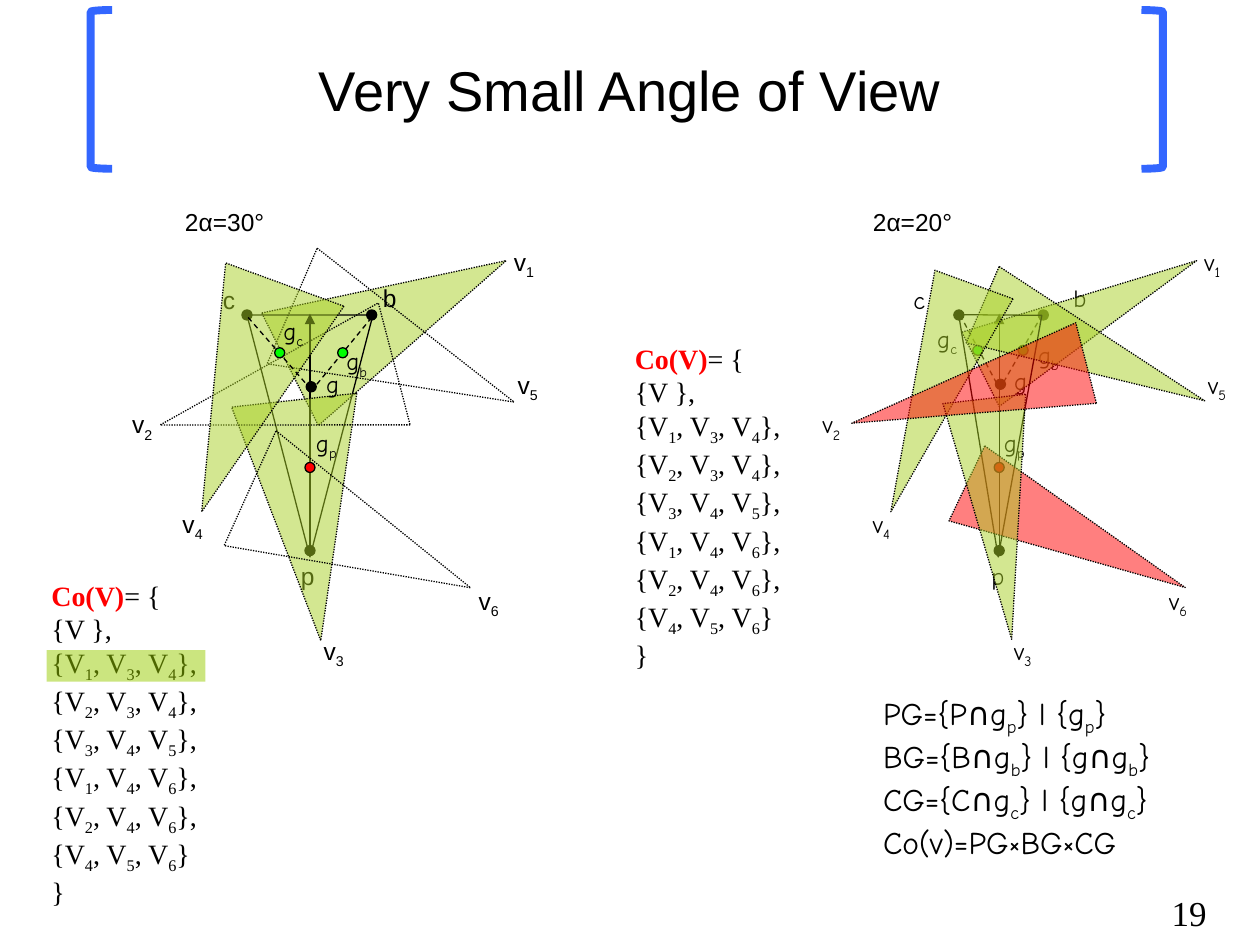
from pptx import Presentation
from pptx.dml.color import RGBColor
from pptx.enum import dml, shapes, text
from pptx.oxml import parse_xml
from pptx.oxml.ns import nsdecls, qn
from pptx.util import Inches, Pt
from lxml import etree

BLACK = RGBColor(0x00, 0x00, 0x00)
WHITE = RGBColor(0xFF, 0xFF, 0xFF)
BLUE = RGBColor(0x33, 0x66, 0xFF)
RED = RGBColor(0xFF, 0x00, 0x00)
GREEN = RGBColor(0x00, 0xFF, 0x00)
LIME = RGBColor(0xA8, 0xD0, 0x25)
MARKER = RGBColor(0x99, 0xCC, 0x00)
ARIAL, COMIC, TIMES = "Arial", "Comic Neue", "Times New Roman"
DOT = 0.08
VIEW_LENGTH = 1.92
RIGHT_SHIFT = 5.48
AUTO = shapes.MSO_SHAPE
DOTTED = dml.MSO_LINE.ROUND_DOT

prs = Presentation()
prs.slide_width, prs.slide_height = Inches(10), Inches(7.5)
s = prs.slides.add_slide(prs.slide_layouts[5])


def add_shape(kind, x, y, w, h, fill=None, line=BLACK, width=0.75,
              rotation=0, dash=None, alpha=None):
    sp = s.shapes.add_shape(kind, Inches(x), Inches(y), Inches(w), Inches(h))
    sp.shadow.inherit = False
    sp.rotation = rotation
    if fill is None:
        sp.fill.background()
    else:
        sp.fill.solid()
        sp.fill.fore_color.rgb = fill
    if alpha:
        color = sp.fill._xPr.find(qn("a:solidFill"))[0]
        etree.SubElement(color, qn("a:alpha")).set("val", str(alpha * 1000))
    if line is None:
        sp.line.fill.background()
    else:
        sp.line.color.rgb = line
        sp.line.width = Pt(width)
        if dash:
            sp.line.dash_style = dash


def add_text(x, y, w, h, lines, font, size=14, wrap=False):
    """Write lines of text; the character after each underscore is a subscript."""
    tf = s.shapes.add_textbox(Inches(x), Inches(y), Inches(w), Inches(h)).text_frame
    tf.word_wrap = wrap
    for i, line in enumerate(lines):
        p = tf.add_paragraph() if i else tf.paragraphs[0]
        first, *rest = line.split("_")
        pieces = [(first, False)]
        for part in rest:
            pieces += [(part[0], True), (part[1:], False)]
        for piece, subscript in pieces:
            if not piece:
                continue
            r = p.add_run()
            r.text = piece
            r.font.name, r.font.size, r.font.color.rgb = font, Pt(size), BLACK
            if subscript:
                r._r.get_or_add_rPr().set("baseline", "-25000")
    return tf


# Title and its brackets
add_shape(AUTO.LEFT_BRACKET, 0.72, 0.08, 0.17, 1.26, WHITE, BLUE, 4.5)
add_shape(AUTO.RIGHT_BRACKET, 9.06, 0.08, 0.17, 1.26, WHITE, BLUE, 4.5)
title = s.shapes.title
title.left, title.top = Inches(0.75), Inches(0.08)
title.width, title.height = Inches(8.5), Inches(1.25)
tf = title.text_frame
tf.text = "Very Small Angle of View"
tf.vertical_anchor = text.MSO_ANCHOR.MIDDLE
p = tf.paragraphs[0]
p.alignment = text.PP_ALIGN.CENTER
font = p.runs[0].font
font.name, font.size, font.color.rgb = ARIAL, Pt(32), BLACK

# Label positions shared by both diagrams
corner_labels = [("label", 2.29, 4.4, "p"), ("label", 2.94, 2.2, "b"),
                 ("label", 1.67, 2.21, "c")]
view_labels = [("label", 3.98, 1.91, "v_1"), ("label", 0.95, 3.2, "v_2"),
               ("label", 2.47, 5, "v_3"), ("label", 1.35, 3.99, "v_4"),
               ("label", 4.01, 2.89, "v_5"), ("label", 3.7, 4.6, "v_6")]

# Diagram parts from back to front:
# view: x, y, rotation, fill; dot: x, y, fill; line: from, to, style
left_parts = [
    ("view", 2.66, 1.54, 63.3, LIME),
    ("base", 1.96, 2.5, 180),
    ("dot", 2.42, 4.33, BLACK), ("dot", 2.91, 2.46, BLACK), ("dot", 1.92, 2.46, BLACK),
    *corner_labels,
    ("line", 2.46, 2.49, 2.46, 4.38, "arrow"),
    ("view", 1.94, 3.17, 173.7, LIME), ("view", 1.7, 2.17, 255.4, None),
    ("view", 2.36, 3.31, 114.3, None), ("view", 2.7, 1.85, 113.4, None),
    ("view", 1.43, 2.2, 200.1, LIME),
    *view_labels,
    ("dot", 2.43, 3.03, BLACK), ("glabel", 2.49, 2.88, "g"),
    ("line", 1.97, 2.52, 2.45, 3.07, "dash"), ("line", 2.95, 2.52, 2.49, 3.08, "dash"),
    ("dot", 2.18, 2.76, GREEN), ("dot", 2.68, 2.76, GREEN),
    ("glabel", 2.15, 2.46, "g_c"), ("glabel", 2.65, 2.7, "g_b"),
    ("dot", 2.42, 3.67, RED), ("glabel", 2.41, 3.35, "g_p"),
]
right_parts = [
    ("dot", 7.9, 3.01, BLACK), ("glabel", 7.95, 2.86, "g"),
    ("line", 7.93, 2.49, 7.93, 4.38, "arrow"),
    *[("glabel", x + RIGHT_SHIFT, y, name)
      for _, x, y, name in view_labels + corner_labels],
    ("dot", 7.89, 3.67, RED),
    ("line", 7.62, 2.5, 7.92, 3.06, "dash"), ("line", 8.27, 2.5, 7.95, 3.06, "dash"),
    ("dot", 7.72, 2.74, GREEN), ("dot", 8.08, 2.74, GREEN),
    ("glabel", 7.34, 2.52, "g_c"), ("glabel", 8.14, 2.65, "g_b"),
    ("glabel", 7.87, 3.35, "g_p"),
    ("dot", 7.89, 4.33, BLACK), ("dot", 8.24, 2.46, BLACK), ("dot", 7.57, 2.46, BLACK),
    ("view", 8.31, 1.54, 63.3, LIME),
    ("base", 7.6, 2.5, 180.5),
    ("view", 8.35, 1.84, 113.4, LIME), ("view", 7.07, 2.2, 200.1, LIME),
    ("view", 8.21, 3.29, 115.5, RED), ("view", 7.59, 3.16, 173.5, LIME),
    ("view", 7.36, 2.16, 255.6, RED),
]

# Both diagrams: heading, then parts
for heading, heading_x, view_width, parts in [
        ("2α=30°", 1.37, 1, left_parts), ("2α=20°", 6.83, 0.66, right_parts)]:
    add_text(heading_x, 1.59, 0.84, 0.33, [heading], ARIAL)
    for kind, x, y, *rest in parts:
        if kind == "view":
            rotation, fill = rest
            add_shape(AUTO.ISOSCELES_TRIANGLE, x, y, view_width, VIEW_LENGTH, fill,
                      rotation=rotation, dash=DOTTED, alpha=50 if fill else None)
        elif kind == "base":
            add_shape(AUTO.ISOSCELES_TRIANGLE, x, y, view_width, VIEW_LENGTH,
                      rotation=rest[0])
        elif kind == "dot":
            add_shape(AUTO.OVAL, x, y, DOT, DOT, rest[0])
        elif kind == "line":
            end_x, end_y, style = rest
            line = s.shapes.add_connector(shapes.MSO_CONNECTOR.STRAIGHT, Inches(x),
                                          Inches(y), Inches(end_x), Inches(end_y))
            line.line.color.rgb = BLACK
            line.line.width = Pt(0.75)
            if style == "dash":
                line.line.dash_style = dml.MSO_LINE.DASH
            else:
                line.line._get_or_add_ln().append(
                    parse_xml(f'<a:headEnd {nsdecls("a")} type="triangle"/>'))
            etree.SubElement(line._element.spPr, qn("a:effectLst"))
        else:
            name = rest[0]
            add_text(x, y, 0.37 if "_" in name else 0.31, 0.33, [name],
                     COMIC if kind == "glabel" else ARIAL)

# Coverage sets beside each diagram
triples = ["134", "234", "345", "146", "246", "456"]
sets = ["{" + ", ".join(f"V_{n}" for n in triple) + "}," for triple in triples]
sets[-1] = sets[-1].rstrip(",")
for x, y in [(4.94, 2.66), (0.31, 4.54)]:
    tf = add_text(x, y, 1.56, 2.51, ["Co(V)", "{V },", *sets, "}"], TIMES, 16, True)
    p = tf.paragraphs[0]
    p.runs[0].font.bold = True
    p.runs[0].font.color.rgb = RED
    r = p.add_run()
    r.text = "= {"
    r.font.name, r.font.size, r.font.color.rgb = TIMES, Pt(16), BLACK
add_shape(AUTO.RECTANGLE, 0.37, 5.16, 1.26, 0.25, MARKER, None, alpha=50)

# Formulas
add_text(6.91, 5.46, 2.81, 1.31,
         ["PG={P∩g_p} l {g_p}", "BG={B∩g_b} l {g∩g_b}", "CG={C∩g_c} l {g∩g_c}",
          "Co(v)=PG×BG×CG"], COMIC, 18, True)

# Page number
add_text(9.2, 7.03, 0.53, 0.43, ["19"], TIMES, 20)

prs.save("out.pptx")
